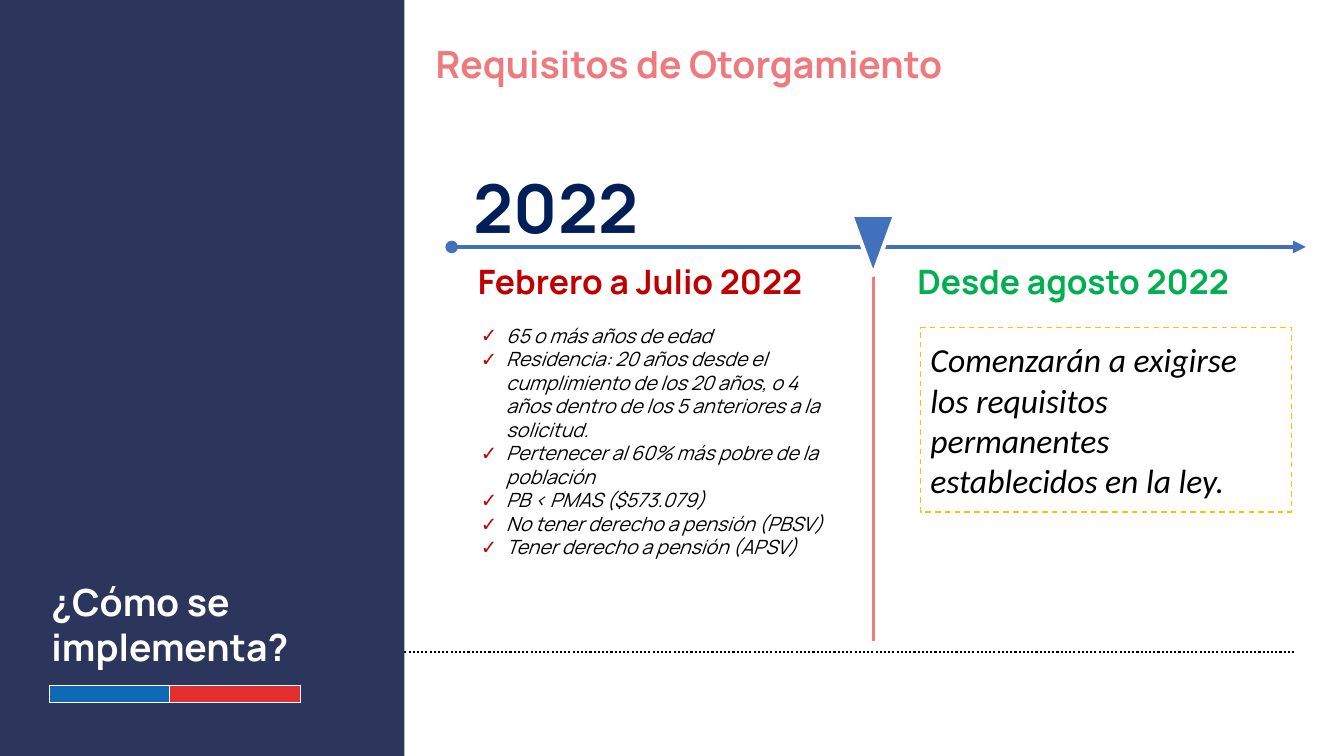
import pptx
import pptx.util
import pptx.dml.color
import pptx.enum.dml
import pptx.enum.shapes
import pptx.enum.text
import pptx.oxml
import pptx.oxml.ns

PX = 9144  # 100 px to the inch
SHAPE = pptx.enum.shapes.MSO_SHAPE
DASH = pptx.enum.dml.MSO_LINE
ANCHOR = pptx.enum.text.MSO_ANCHOR
ALIGN = pptx.enum.text.PP_ALIGN
NAVY, BLUE, RED = "2C365C", "4170BD", "C00000"
FONT = "Manrope"
NEEDS = [
    "65 o más años de edad",
    "Residencia: 20 años desde el cumplimiento de los 20 años, o 4 años "
    "dentro de los 5 anteriores a la solicitud.",
    "Pertenecer al 60% más pobre de la población",
    "PB < PMAS ($573.079)",
    "No tener derecho a pensión (PBSV)",
    "Tener derecho a pensión (APSV)",
]


def px(*sizes):
    return [pptx.util.Emu(size * PX) for size in sizes]


def paint(color, code):
    color.rgb = pptx.dml.color.RGBColor.from_string(code)


def node(parent, tag, **attrs):
    """Append a DrawingML element to parent."""
    child = parent.makeelement(pptx.oxml.ns.qn("a:" + tag), attrs)
    parent.append(child)
    return child


def stroke(line, code, width, dash=None):
    paint(line.color, code)
    line.width = pptx.util.Pt(width)
    if dash:
        line.dash_style = dash


def block(slide, kind, box, fill, edge=None):
    """Add a filled shape; edge holds colour, width and dash of its outline."""
    shape = slide.shapes.add_shape(kind, *px(*box))
    shape.shadow.inherit = False
    shape.fill.solid()
    paint(shape.fill.fore_color, fill)
    if edge:
        stroke(shape.line, *edge)
    else:
        shape.line.fill.background()
    return shape


def rule(slide, start, end, code, width, dash=None):
    line = slide.shapes.add_connector(
        pptx.enum.shapes.MSO_CONNECTOR.STRAIGHT, *px(*start, *end))
    stroke(line.line, code, width, dash)
    node(line._element.spPr, "effectLst")
    return line


def setup(frame, anchor=ANCHOR.TOP, side=10, edge=5):
    frame.word_wrap = True
    frame.auto_size = pptx.enum.text.MSO_AUTO_SIZE.NONE
    frame.vertical_anchor = anchor
    frame.margin_left, frame.margin_right = px(side, side)
    frame.margin_top, frame.margin_bottom = px(edge, edge)


def write(para, text, size, code, font=FONT, bold=False, italic=False,
          align=ALIGN.LEFT, space=1.0):
    para.alignment = align
    para.line_spacing = space
    para.space_before = pptx.util.Pt(0)
    run = para.add_run()
    run.text = text
    run.font.name = font
    run.font.size = pptx.util.Pt(size)
    run.font.bold = bold
    run.font.italic = italic
    paint(run.font.color, code)


def place(shape, box):
    shape.left, shape.top, shape.width, shape.height = px(*box)


def label(slide, box, text, size, code, align=ALIGN.LEFT):
    shape = slide.shapes.add_textbox(*px(*box))
    setup(shape.text_frame)
    write(shape.text_frame.paragraphs[0], text, size, code, bold=True,
          align=align, space=0.9)


def check(para):
    """Give a paragraph a red tick and a hanging indent."""
    props = para._p.get_or_add_pPr()
    indent = 25 * PX
    props.set("marL", str(indent))
    props.set("indent", str(-indent))
    node(node(props, "buClr"), "srgbClr", val=RED)
    node(props, "buFont", typeface=FONT)
    node(props, "buChar", char="✓")


def panel(slide):
    block(slide, SHAPE.RECTANGLE, (0, 0, 401, 750), NAVY)
    head = slide.shapes.add_textbox(*px(38, 558, 332, 122))
    setup(head.text_frame, ANCHOR.MIDDLE, 13, 13)
    write(head.text_frame.paragraphs[0], "¿Cómo se implementa?", 26.7,
          "FFFFFF", bold=True)
    for left, fill in ((49, "1069B4"), (168, "E22E2C")):
        block(slide, SHAPE.RECTANGLE, (left, 680, 130, 17), fill,
              ("FFFFFF", 0.75))


def title(slide):
    shape = slide.shapes.title
    place(shape, (422, 41, 741, 43))
    setup(shape.text_frame)
    write(shape.text_frame.paragraphs[0], "Requisitos de Otorgamiento", 26.7,
          "EE7A7D", bold=True, space=0.9)


def needs(slide):
    shape = slide.placeholders[1]
    place(shape, (467, 311, 363, 279))
    frame = shape.text_frame
    setup(frame, edge=10)
    for num, text in enumerate(NEEDS):
        para = frame.add_paragraph() if num else frame.paragraphs[0]
        check(para)
        write(para, text, 14, "000000", italic=True)


def axis(slide):
    line = rule(slide, (448, 245), (1295, 245), BLUE, 3)
    ends = line.line._get_or_add_ln()
    node(ends, "headEnd", type="oval")
    node(ends, "tailEnd", type="triangle")
    label(slide, (433, 169, 237, 68), "2022", 48, "001E58", ALIGN.CENTER)
    rule(slide, (866, 231), (866, 636), "F07A7C", 2.25)
    block(slide, SHAPE.FLOWCHART_MERGE, (844, 213, 44, 60), BLUE,
          ("FFFFFF", 3))


def notice(slide):
    shape = block(slide, SHAPE.RECTANGLE, (913, 325, 368, 183), "FFFFFF",
                  ("FFC000", 1, DASH.DASH))
    setup(shape.text_frame, ANCHOR.MIDDLE)
    write(shape.text_frame.paragraphs[0],
          "Comenzarán a exigirse los requisitos permanentes establecidos "
          "en la ley.", 24, "000000", font="Calibri", italic=True)


def main():
    deck = pptx.Presentation()
    deck.slide_width, deck.slide_height = px(1333, 750)
    slide = deck.slides.add_slide(deck.slide_layouts[1])
    rule(slide, (401, 647), (1283, 647), "000000", 1.5, DASH.ROUND_DOT)
    panel(slide)
    title(slide)
    axis(slide)
    label(slide, (464, 258, 368, 36), "Febrero a Julio 2022", 24, RED)
    label(slide, (900, 258, 396, 36), "Desde agosto 2022", 24, "00B050")
    needs(slide)
    notice(slide)
    deck.save("out.pptx")


if __name__ == "__main__":
    main()
